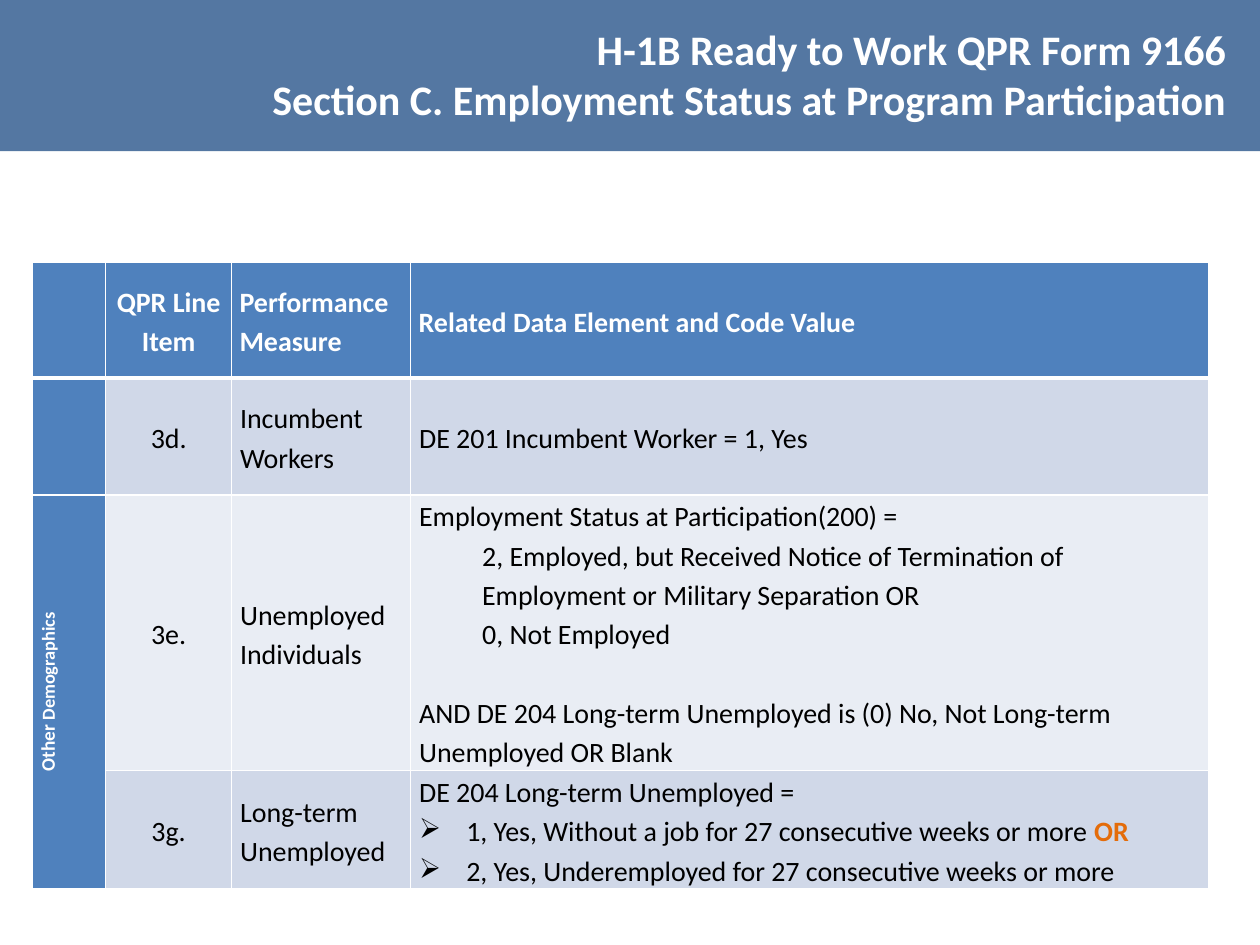
import pptx
import pptx.dml.color
import pptx.enum.shapes
import pptx.enum.text
import pptx.oxml
import pptx.oxml.ns
import pptx.util
import lxml.etree as etree

Cm, Pt = pptx.util.Cm, pptx.util.Pt
Align = pptx.enum.text.PP_ALIGN
Anchor = pptx.enum.text.MSO_ANCHOR
qn = pptx.oxml.ns.qn

COLORS = {
    "band": "376092", "head": "4F81BD", "odd": "D0D8E8", "even": "E9EDF4",
    "white": "FFFFFF", "black": "000000", "accent": "E46C0A",
}
LINE = 22.5  # height of one line of table text, in points


def rgb(name):
    return pptx.dml.color.RGBColor.from_string(COLORS[name])


class Deck:
    """Holds the style and the current slide."""

    def __init__(self):
        self.face = "Calibri"
        self.prs = pptx.Presentation()
        self.prs.slide_width, self.prs.slide_height = Cm(25.4), Cm(19.05)
        self.slide = self.prs.slides.add_slide(self.prs.slide_layouts[5])

    def style(self, font, size, color, bold):
        font.name, font.size, font.bold = self.face, Pt(size), bold
        font.color.rgb = rgb(color)

    def band(self, height, alpha):
        rect = pptx.enum.shapes.MSO_SHAPE.RECTANGLE
        box = self.slide.shapes.add_shape(
            rect, 0, 0, self.prs.slide_width, Cm(height))
        box.shadow.inherit = False
        box.line.fill.background()
        box.fill.solid()
        box.fill.fore_color.rgb = rgb("band")
        tint = box.fill._xPr.find(".//" + qn("a:srgbClr"))
        etree.SubElement(tint, qn("a:alpha"), val=str(alpha * 1000))
        # Place the band behind the title
        tree = self.slide.shapes._spTree
        tree.remove(box._element)
        tree.insert(2, box._element)

    def title(self, text, left, top, width, height):
        box = self.slide.shapes.title
        box.left, box.top = Cm(left), Cm(top)
        box.width, box.height = Cm(width), Cm(height)
        frame = box.text_frame
        frame.text = text
        frame.word_wrap = True
        frame.auto_size = pptx.enum.text.MSO_AUTO_SIZE.NONE
        frame.vertical_anchor = Anchor.MIDDLE
        frame.margin_right = Cm(0.68)
        para = frame.paragraphs[0]
        para.alignment = Align.RIGHT
        self.style(para.font, 24, "white", True)

    def table(self, left, top, cols, rows):
        frame = self.slide.shapes.add_table(
            len(rows), len(cols), Cm(left), Cm(top),
            Cm(sum(cols)), Cm(sum(rows)))
        grid = frame.table
        grid.first_col = True
        for col, width in zip(grid.columns, cols):
            col.width = Cm(width)
        for row, height in zip(grid.rows, rows):
            row.height = Cm(height)
        return grid

    def cell(self, cell, fill, inset, top=1, bottom=1):
        cell.fill.solid()
        cell.fill.fore_color.rgb = rgb(fill)
        cell.vertical_anchor = Anchor.MIDDLE
        cell.margin_left = cell.margin_right = Cm(inset)
        cell.margin_top = cell.margin_bottom = 0
        props = cell._tc.get_or_add_tcPr()
        sides = {"lnL": 1, "lnR": 1, "lnT": top, "lnB": bottom}
        for place, (side, width) in enumerate(sides.items()):
            edge = etree.Element(qn("a:" + side), w=str(Pt(width)))
            paint = etree.SubElement(edge, qn("a:solidFill"))
            etree.SubElement(paint, qn("a:srgbClr"), val=COLORS["white"])
            props.insert(place, edge)

    def para(self, cell, text, first=True, center=False, color="black",
             bold=False, size=16, indent=0, bullet=None, before=0):
        frame = cell.text_frame
        para = frame.paragraphs[0] if first else frame.add_paragraph()
        para.alignment = Align.CENTER if center else Align.LEFT
        para.line_spacing = 1.15
        if before:
            para.space_before = Pt(before)
        props = para._p.get_or_add_pPr()
        if indent:
            props.set("marL", str(Cm(indent)))
            props.set("indent", str(-Cm(indent) if bullet else 0))
        if bullet:
            etree.SubElement(props, qn("a:buChar"), char=bullet)
        self.style(para.font, size, color, bold)
        para.add_run().text = text
        return para


def main():
    deck = Deck()

    # Heading
    deck.band(3.05, 85)
    deck.title("H-1B Ready to Work QPR Form 9166\v"
               "Section C. Employment Status at Program Participation",
               4.88, 0, 20.52, 2.97)

    # Table frame, fills and borders
    grid = deck.table(0.66, 5.28, [1.47, 2.54, 3.61, 16.08],
                      [2.34, 2.36, 5.54, 2.36])
    shades = ["head", "odd", "even", "odd"]
    for y, shade in enumerate(shades):
        for x in range(4):
            deck.cell(grid.cell(y, x), "head" if x == 0 else shade,
                      0.17 if y else 0.16,
                      top=3 if y == 1 else 1, bottom=1 if y else 3)

    # Header row
    heads = ["QPR Line Item", "Performance Measure",
             "Related Data Element and Code Value"]
    for x, text in enumerate(heads, 1):
        deck.para(grid.cell(0, x), text, center=x == 1,
                  color="white", bold=True)

    # Group label, turned upwards
    group = grid.cell(2, 0)
    group.merge(grid.cell(3, 0))
    group._tc.get_or_add_tcPr().set("vert", "vert270")
    label = deck.para(group, "Other ", center=True, color="white",
                      bold=True, size=11)
    tail = label.add_run()
    tail.text = "Demographics"
    tail.font.size = Pt(10.5)

    # Line items, measures and code values
    sub = {"indent": 1.27}
    point = {"indent": 0.95, "bullet": "➢"}
    items = [
        ("3d.", "Incumbent Workers",
         [("DE 201 Incumbent Worker = 1, Yes", {})]),
        ("3e.", "Unemployed Individuals",
         [("Employment Status at Participation(200) =", {}),
          ("2, Employed, but Received Notice of Termination of "
           "Employment or Military Separation OR", sub),
          ("0, Not Employed", sub),
          ("AND DE 204 Long-term Unemployed is (0) No, Not Long-term "
           "Unemployed OR Blank", {"before": LINE})]),
        ("3g.", "Long-term Unemployed",
         [("DE 204 Long-term Unemployed =", {}),
          ("1, Yes, Without a job for 27 consecutive weeks or more ", point),
          ("2, Yes, Underemployed for 27 consecutive weeks or more", point)]),
    ]
    for y, (item, measure, values) in enumerate(items, 1):
        deck.para(grid.cell(y, 1), item, center=True)
        deck.para(grid.cell(y, 2), measure)
        for i, (text, look) in enumerate(values):
            deck.para(grid.cell(y, 3), text, first=i == 0, **look)

    # Highlighted word
    word = grid.cell(3, 3).text_frame.paragraphs[1].add_run()
    word.text = "OR"
    word.font.bold = True
    word.font.color.rgb = rgb("accent")

    deck.prs.save("out.pptx")


if __name__ == "__main__":
    main()
